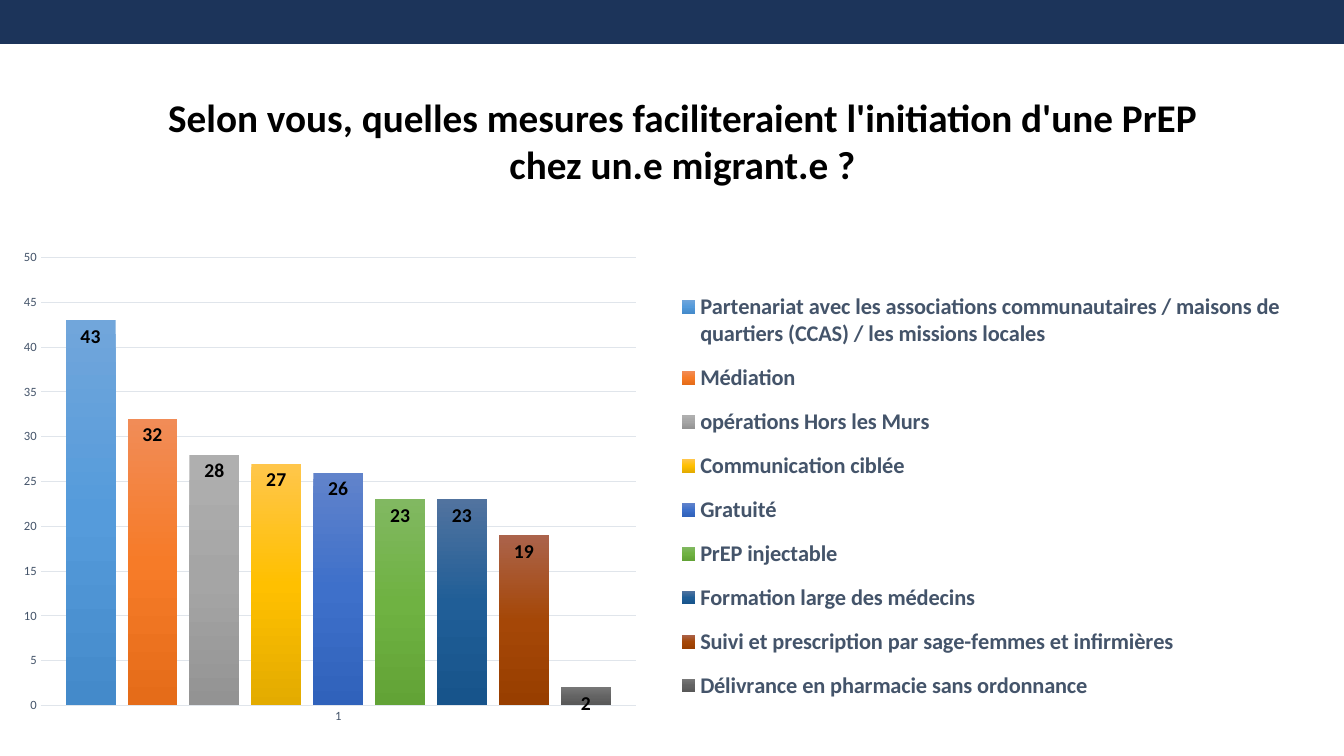
import copy
import lxml.etree
import pptx
import pptx.chart.data
import pptx.dml.color
import pptx.enum.chart
import pptx.enum.shapes
import pptx.enum.text
import pptx.oxml.ns
import pptx.util

Pt = pptx.util.Pt
qn = pptx.oxml.ns.qn
FONT = "Calibri"
NAVY, SLATE, BLACK, GRID = "1C345A", "44546A", "000000", "E0E5EB"

# Answer, count, gradient from top to bottom
ANSWERS = [
    ("Partenariat avec les associations communautaires / maisons de "
     "quartiers (CCAS) / les missions locales", 43, ("71A6DB", "559BDB", "448ACA")),
    ("Médiation", 32, ("F18C57", "F67B28", "E56C19")),
    ("opérations Hors les Murs", 28, ("AFAFAF", "A5A5A5", "939393")),
    ("Communication ciblée", 27, ("FFC64B", "FFC000", "E3AB00")),
    ("Gratuité", 26, ("6183CB", "3E70CA", "3062BB")),
    ("PrEP injectable", 23, ("81B861", "6FB242", "62A336")),
    ("Formation large des médecins", 23, ("51739F", "205E97", "17548B")),
    ("Suivi et prescription par sage-femmes et infirmières", 19,
     ("AB634B", "A54707", "983E00")),
    ("Délivrance en pharmacie sans ordonnance", 2, ("777777", "636363", "585858")),
]


def color(code):
    return pptx.dml.color.RGBColor.from_string(code)


def style(font, size, code, bold=False):
    font.name, font.size, font.bold = FONT, Pt(size), bold
    font.color.rgb = color(code)


def stroke(line, code, width):
    line.color.rgb = color(code)
    line.width = Pt(width)


def place(part, index, box, inner=False):
    """Fix a chart part at a box given in fractions of the chart."""
    for old in part.findall(qn("c:layout")):
        part.remove(old)
    layout = lxml.etree.Element(qn("c:layout"))
    manual = lxml.etree.SubElement(layout, qn("c:manualLayout"))
    rules = [("layoutTarget", "inner")] if inner else []
    rules += [("xMode", "edge"), ("yMode", "edge")]
    rules += zip("xywh", box)
    for name, value in rules:
        lxml.etree.SubElement(manual, qn("c:" + name)).set("val", str(value))
    part.insert(index, layout)


def shade(bar, codes):
    """Fill a series with a vertical gradient of three colours."""
    fill = bar.format.fill
    fill.gradient()
    fill.gradient_angle = 270
    stops = bar.format.fill.gradient_stops
    first = next(bar._element.iter(qn("a:gs")))
    first.addnext(copy.deepcopy(first))
    stops = fill.gradient_stops
    for stop, place_at, code in zip(stops, (0, 0.5, 1), codes):
        stop.position = place_at
        stop.color.rgb = color(code)


def add_band(slide, left, top, width, height):
    band = slide.shapes.add_shape(pptx.enum.shapes.MSO_SHAPE.RECTANGLE,
                                  Pt(left), Pt(top), Pt(width), Pt(height))
    band.shadow.inherit = False
    band.fill.solid()
    band.fill.fore_color.rgb = color(NAVY)
    stroke(band.line, NAVY, 1)


def add_title(slide, left, top, width, height):
    frame = slide.shapes.add_textbox(Pt(left), Pt(top), Pt(width), Pt(height)).text_frame
    frame.word_wrap = True
    line = frame.paragraphs[0]
    line.text = ("Selon vous, quelles mesures faciliteraient l'initiation "
                 "d'une PrEP chez un.e migrant.e ?")
    line.alignment = pptx.enum.text.PP_ALIGN.CENTER
    style(line.font, 28, BLACK, True)


def add_bars(slide, left, top, width, height):
    enum = pptx.enum.chart
    data = pptx.chart.data.CategoryChartData()
    data.categories = ["1"]
    for name, count, _ in ANSWERS:
        data.add_series(name, [count])
    chart = slide.shapes.add_chart(enum.XL_CHART_TYPE.COLUMN_CLUSTERED, Pt(left), Pt(top),
                                   Pt(width), Pt(height), data).chart
    style(chart.font, 10, BLACK)
    chart.has_title = False

    # Axes
    for axis in (chart.category_axis, chart.value_axis):
        axis.major_tick_mark = axis.minor_tick_mark = enum.XL_TICK_MARK.NONE
        style(axis.tick_labels.font, 9, SLATE)
    stroke(chart.category_axis.format.line, GRID, 0.75)
    scale = chart.value_axis
    scale.minimum_scale, scale.maximum_scale, scale.major_unit = 0, 50, 5
    scale.format.line.fill.background()
    stroke(scale.major_gridlines.format.line, GRID, 0.75)

    # Columns and their counts
    plot = chart.plots[0]
    plot.vary_by_categories = False
    plot.gap_width, plot.overlap = 100, -24
    for bar, (_, _, codes) in zip(plot.series, ANSWERS):
        shade(bar, codes)
        labels = bar.data_labels
        labels.show_value = True
        labels.position = enum.XL_LABEL_POSITION.INSIDE_END
        style(labels.font, 14, BLACK, True)

    # Legend
    chart.has_legend = True
    legend = chart.legend
    legend.position = enum.XL_LEGEND_POSITION.BOTTOM
    legend.include_in_layout = False
    style(legend.font, 16, SLATE, True)

    place(chart._chartSpace.chart.plotArea, 0, (0.03, 0.035, 0.462, 0.835), True)
    place(legend._element, 1, (0.52, 0.07, 0.48, 0.82))


def main():
    deck = pptx.Presentation()
    deck.slide_width, deck.slide_height = Pt(960), Pt(540)
    slide = deck.slides.add_slide(deck.slide_layouts[6])
    add_bars(slide, 1.44, 170.64, 920.16, 383.04)
    add_band(slide, 0, 0.72, 960, 30.24)
    add_title(slide, 100.8, 63.36, 773.28, 74.88)
    deck.save("out.pptx")


if __name__ == "__main__":
    main()
